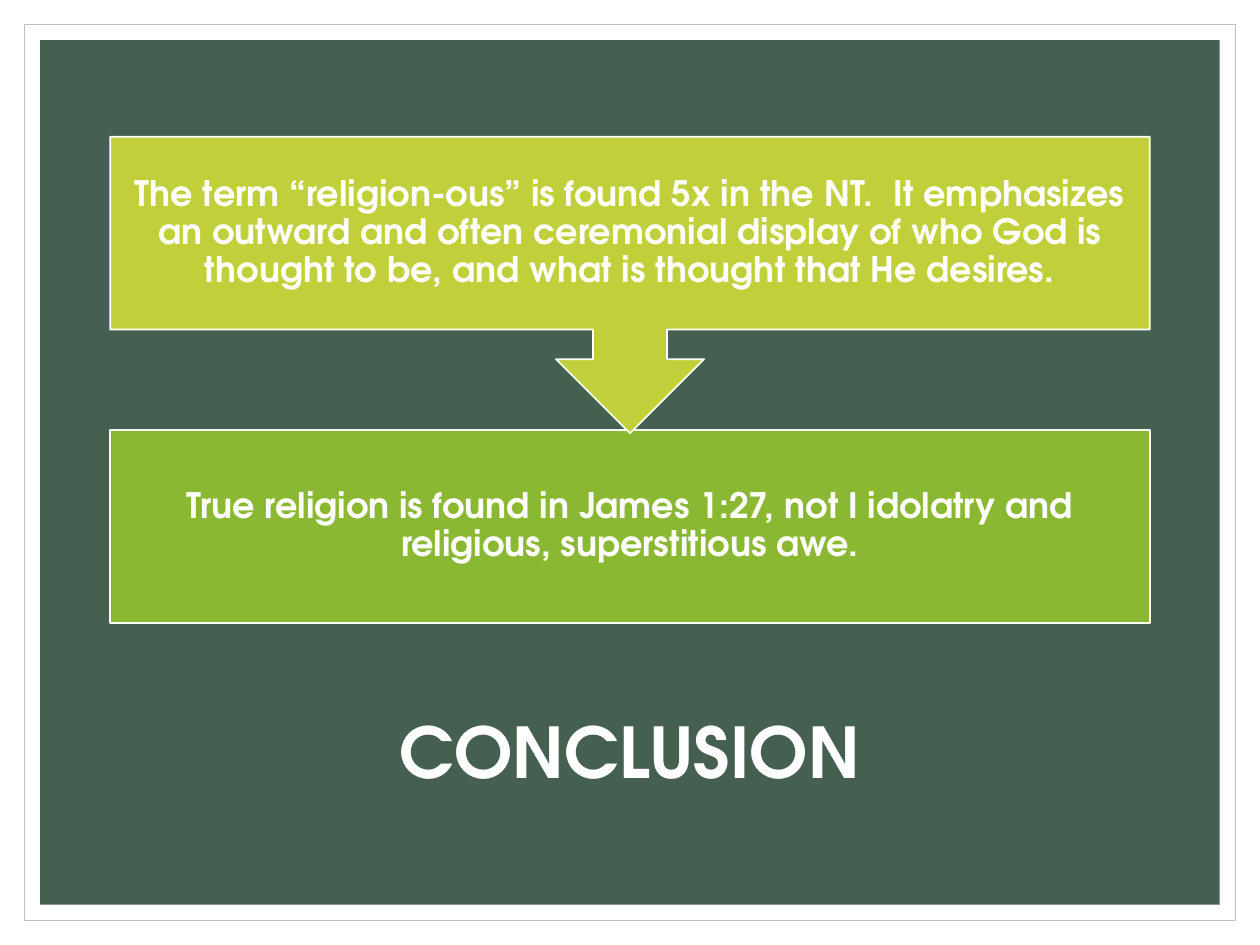
import pptx
import pptx.util
import pptx.dml.color
import pptx.enum.shapes
import pptx.enum.text

Pt = pptx.util.Pt
SHAPE = pptx.enum.shapes.MSO_SHAPE
WIDTH, HEIGHT = 720, 540
LEFT, SPAN = 63, 594
WHITE = "FFFFFF"


def color(code):
    return pptx.dml.color.RGBColor.from_string(code)


def write(shape, text, size=20, inset=11.4, font="TeX Gyre Adventor"):
    frame = shape.text_frame
    frame.word_wrap = True
    frame.vertical_anchor = pptx.enum.text.MSO_ANCHOR.MIDDLE
    frame.margin_left = frame.margin_right = Pt(inset)
    frame.margin_top = frame.margin_bottom = Pt(inset)
    para = frame.paragraphs[0]
    para.alignment = pptx.enum.text.PP_ALIGN.CENTER
    para.line_spacing = 0.9
    run = para.add_run()
    run.text = text
    run.font.name = font
    run.font.size = Pt(size)
    run.font.bold = True
    run.font.color.rgb = color(WHITE)


def block(slide, kind, left, top, width, height, fill, line=None, weight=1):
    shape = slide.shapes.add_shape(kind, Pt(left), Pt(top), Pt(width), Pt(height))
    shape.shadow.inherit = False
    shape.fill.solid()
    shape.fill.fore_color.rgb = color(fill)
    if line:
        shape.line.color.rgb = color(line)
        shape.line.width = Pt(weight)
    else:
        shape.line.fill.background()
    return shape


def panel(slide, edge, fill, **format):
    # Centred on the slide, with an equal margin on all sides
    block(slide, SHAPE.RECTANGLE, edge, edge,
          WIDTH - 2 * edge, HEIGHT - 2 * edge, fill, **format)


def main():
    deck = pptx.Presentation()
    deck.slide_width, deck.slide_height = Pt(WIDTH), Pt(HEIGHT)
    slide = deck.slides.add_slide(deck.slide_layouts[6])

    # Frame and backdrop
    panel(slide, 13.7, WHITE, line="BFBFBF", weight=0.5)
    panel(slide, 23, "455F51")

    # Title
    title = slide.shapes.add_textbox(Pt(LEFT), Pt(378), Pt(SPAN), Pt(108))
    write(title, "CONCLUSION", size=40, inset=3.6)

    # Two steps, the upper one pointing to the lower one
    lower = block(slide, SHAPE.RECTANGLE, LEFT, 245.8, SPAN, 110.2,
                  "8AB833", line=WHITE)
    write(lower, "True religion is found in James 1:27, not I idolatry and "
                 "religious, superstitious awe.")
    upper = block(slide, SHAPE.DOWN_ARROW_CALLOUT, LEFT, 78.2, SPAN, 169.4,
                  "C0CF3A", line=WHITE)
    write(upper, "The term “religion-ous” is found 5x in the NT.  It emphasizes "
                 "an outward and often ceremonial display of who God is thought "
                 "to be, and what is thought that He desires.")

    deck.save("out.pptx")


if __name__ == "__main__":
    main()
